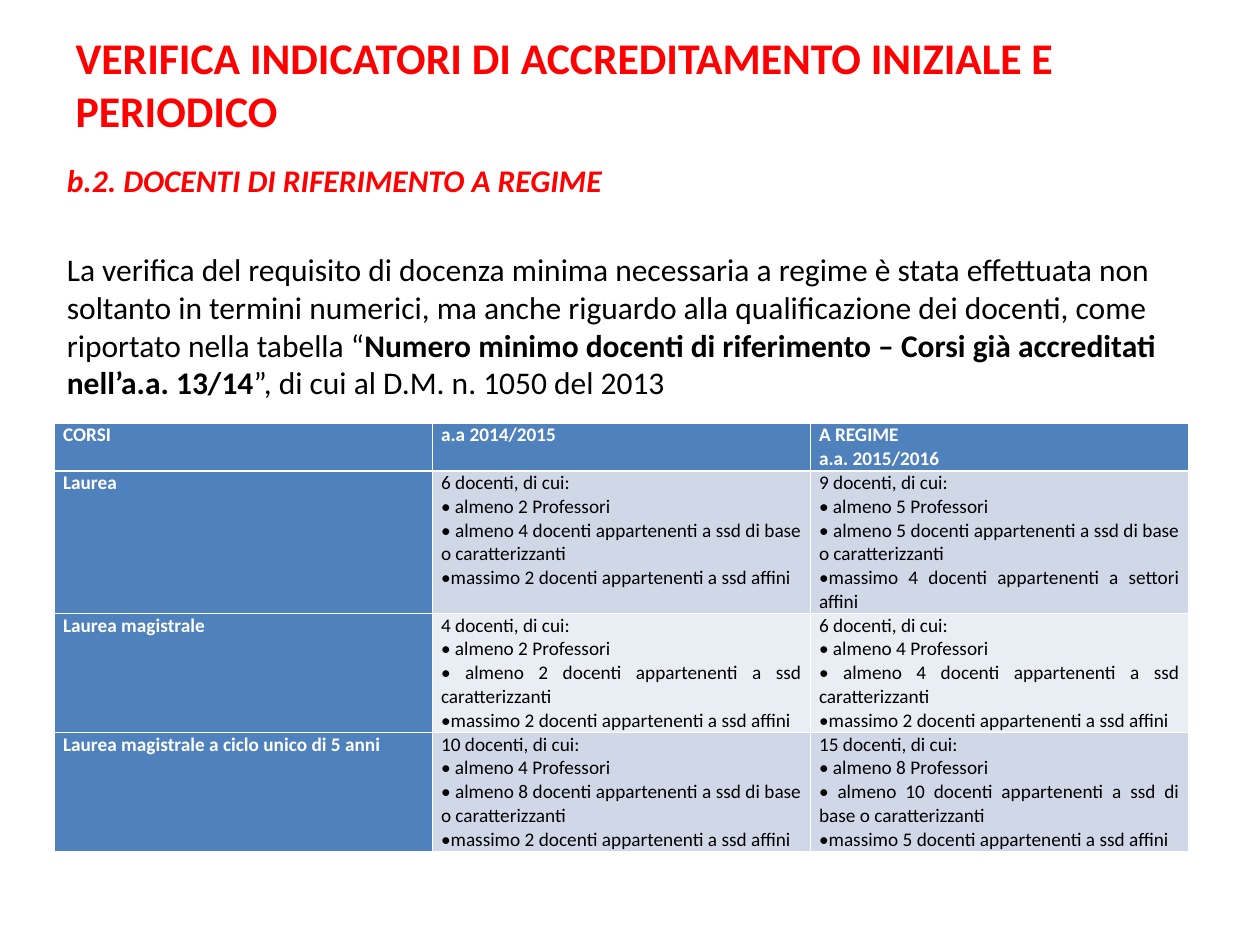
from dataclasses import dataclass

from lxml.etree import SubElement
from pptx import Presentation
from pptx.dml.color import RGBColor
from pptx.enum.text import MSO_ANCHOR as Anchor, MSO_AUTO_SIZE as AutoSize, PP_ALIGN as Align
from pptx.oxml.ns import qn
from pptx.util import Pt


@dataclass(frozen=True)
class Theme:
    font: str = "Calibri"
    accent: str = "FF0000"
    text: str = "000000"
    header_text: str = "FFFFFF"
    header_fill: str = "4F81BD"
    bands: tuple = ("D0D8E8", "E9EDF4")
    title_size: float = 25
    body_size: float = 18
    table_size: float = 11


def add_run(paragraph, text, *, font, size, color, bold=False, italic=False):
    run = paragraph.add_run()
    run.text = text
    run.font.name = font
    run.font.size = Pt(size)
    run.font.color.rgb = RGBColor.from_string(color)
    run.font.bold = bold
    run.font.italic = italic


def place(shape, left, top, width, height):
    shape.left, shape.top = Pt(left), Pt(top)
    shape.width, shape.height = Pt(width), Pt(height)


def remove_bullet(paragraph):
    properties = paragraph._p.get_or_add_pPr()
    properties.set("marL", "0")
    properties.set("indent", "0")
    SubElement(properties, qn("a:buNone"))


def requirements(total, professors, teachers, area, maximum, others="ssd affini"):
    """Return the lines of one table cell."""
    return [
        f"{total} docenti, di cui:",
        f"• almeno {professors} Professori",
        f"• almeno {teachers} docenti appartenenti a ssd {area}",
        f"•massimo {maximum} docenti appartenenti a {others}",
    ]


class SlideBuilder:
    def __init__(self, slide, theme):
        self.slide = slide
        self.theme = theme

    def title(self, text, box, bottom_margin):
        shape = self.slide.shapes.title
        place(shape, *box)
        frame = shape.text_frame
        frame.auto_size = AutoSize.NONE
        frame.vertical_anchor = Anchor.BOTTOM
        frame.margin_bottom = Pt(bottom_margin)
        paragraph = frame.paragraphs[0]
        paragraph.alignment = Align.LEFT
        add_run(paragraph, text, font=self.theme.font, size=self.theme.title_size,
                color=self.theme.accent, bold=True)

    def body(self, paragraphs, box):
        """Fill the body from (space before, runs) pairs; a run is text and its format."""
        shape = self.slide.placeholders[1]
        place(shape, *box)
        frame = shape.text_frame
        frame.auto_size = AutoSize.NONE
        for index, (space_before, runs) in enumerate(paragraphs):
            paragraph = frame.add_paragraph() if index else frame.paragraphs[0]
            paragraph.space_before = Pt(space_before)
            remove_bullet(paragraph)
            for text, style in runs:
                style = {"color": self.theme.text, **style}
                add_run(paragraph, text, font=self.theme.font,
                        size=self.theme.body_size, **style)

    def cell(self, cell, lines, fill, color, bold):
        cell.fill.solid()
        cell.fill.fore_color.rgb = RGBColor.from_string(fill)
        cell.margin_left = cell.margin_right = Pt(5)
        cell.margin_top = cell.margin_bottom = 0
        for index, line in enumerate(lines):
            frame = cell.text_frame
            paragraph = frame.add_paragraph() if index else frame.paragraphs[0]
            paragraph.alignment = Align.JUSTIFY
            add_run(paragraph, line, font=self.theme.font, size=self.theme.table_size,
                    color=color, bold=bold)

    def table(self, rows, left, top, width, row_heights):
        theme = self.theme
        table = self.slide.shapes.add_table(
            len(rows), len(rows[0]), Pt(left), Pt(top), Pt(width), Pt(sum(row_heights))).table
        table.first_col = True
        for row_index, (row, height) in enumerate(zip(rows, row_heights)):
            table.rows[row_index].height = Pt(height)
            for column_index, lines in enumerate(row):
                is_header = row_index == 0 or column_index == 0
                band = theme.bands[(row_index - 1) % len(theme.bands)]
                self.cell(table.cell(row_index, column_index), lines,
                          fill=theme.header_fill if is_header else band,
                          color=theme.header_text if is_header else theme.text,
                          bold=is_header)


def main():
    presentation = Presentation()
    presentation.slide_width, presentation.slide_height = Pt(720), Pt(540)
    theme = Theme()
    slide = presentation.slides.add_slide(presentation.slide_layouts[1])
    builder = SlideBuilder(slide, theme)

    builder.title("VERIFICA INDICATORI DI ACCREDITAMENTO INIZIALE E PERIODICO",
                  box=(36, 21.6, 636, 90), bottom_margin=34)

    heading = {"color": theme.accent, "bold": True, "italic": True}
    builder.body([
        (3.6, [("b.2. DOCENTI DI RIFERIMENTO A REGIME", heading)]),
        (29, [
            ("La verifica del requisito di docenza minima necessaria a regime è stata "
             "effettuata non soltanto in termini numerici, ma anche riguardo alla "
             "qualificazione dei docenti, come riportato nella tabella “", {}),
            ("Numero minimo docenti di riferimento – Corsi già accreditati "
             "nell’a.a. 13/14", {"bold": True}),
            ("”, di cui al D.M. n. 1050 del 2013", {}),
        ]),
    ], box=(31, 88.6, 647, 153.4))

    broad = "di base o caratterizzanti"
    narrow = "caratterizzanti"
    builder.table([
        [["CORSI"], ["a.a 2014/2015"], ["A REGIME", "a.a. 2015/2016"]],
        [["Laurea"], requirements(6, 2, 4, broad, 2),
         requirements(9, 5, 5, broad, 4, "settori affini")],
        [["Laurea magistrale"], requirements(4, 2, 2, narrow, 2),
         requirements(6, 4, 4, narrow, 2)],
        [["Laurea magistrale a ciclo unico di 5 anni"], requirements(10, 4, 8, broad, 2),
         requirements(15, 8, 10, broad, 5)],
    ], left=31, top=242, width=648, row_heights=(26.6, 79.2, 66.2, 66.2))

    presentation.save("out.pptx")


if __name__ == "__main__":
    main()
